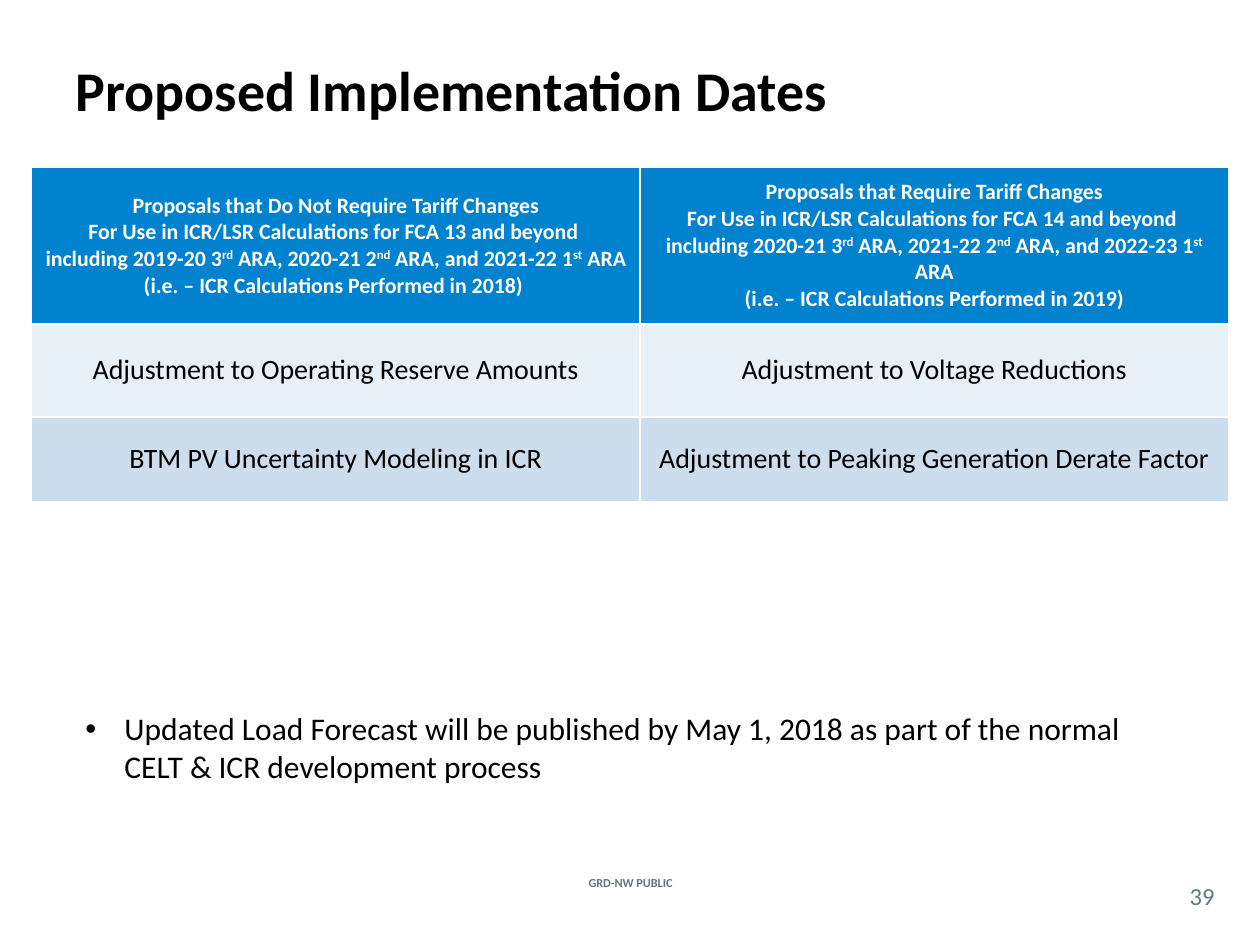
from lxml import etree
from pptx import Presentation
from pptx.dml.color import RGBColor
from pptx.enum.text import MSO_ANCHOR, PP_ALIGN
from pptx.oxml import parse_xml
from pptx.oxml.ns import nsdecls, qn
from pptx.util import Inches, Pt

LEFT, CENTER = PP_ALIGN.LEFT, PP_ALIGN.CENTER
TOP, MIDDLE = MSO_ANCHOR.TOP, MSO_ANCHOR.MIDDLE
BLACK = RGBColor(0x00, 0x00, 0x00)
WHITE = RGBColor(0xFF, 0xFF, 0xFF)
GRAY = RGBColor(0x62, 0x77, 0x7F)
BLUE = RGBColor(0x00, 0x82, 0xCF)
PALE_BLUE = RGBColor(0xE7, 0xEF, 0xF7)
LIGHT_BLUE = RGBColor(0xCC, 0xDD, 0xEE)


def add_runs(paragraph, text, size, color, bold=False, align=LEFT):
    """Fill a paragraph; text between carets is set as superscript."""
    paragraph.alignment = align
    for index, part in enumerate(text.split("^")):
        run = paragraph.add_run()
        run.text = part
        run.font.name = "Calibri"
        run.font.size = Pt(size)
        run.font.bold = bold
        run.font.color.rgb = color
        if index % 2:
            run.font._element.set("baseline", "30000")


def add_text(box, text, size, color, bold=False, align=LEFT, anchor=MIDDLE, inset=None):
    shape = slide.shapes.add_textbox(*(Inches(length) for length in box))
    frame = shape.text_frame
    frame.word_wrap = True
    frame.vertical_anchor = anchor
    if inset is not None:
        frame.margin_left = frame.margin_right = Inches(inset)
        frame.margin_top = frame.margin_bottom = Inches(inset)
    add_runs(frame.paragraphs[0], text, size, color, bold, align)
    return frame.paragraphs[0]


presentation = Presentation()
presentation.slide_width = Inches(10)
presentation.slide_height = Inches(7.5)
slide = presentation.slides.add_slide(presentation.slide_layouts[6])

add_text((4.27, 6.92, 1.47, 0.17), "GRD-NW PUBLIC", 7, GRAY, bold=True, align=CENTER)
add_text((9.33, 6.96, 0.42, 0.29), "39", 14, GRAY, align=CENTER, inset=0)
add_text((0.5, 0.08, 9, 1.25), "Proposed Implementation Dates", 32, BLACK, bold=True)

# Table of proposals: text, size, colour and fill follow the row
rows = [
    (1.24, BLUE, WHITE, 12.5, [
        ["Proposals that Do Not Require Tariff Changes",
         "For Use in ICR/LSR Calculations for FCA 13 and beyond ",
         "including 2019-20 3^rd^ ARA, 2020-21 2^nd^ ARA, and 2021-22 1^st^ ARA",
         "(i.e. – ICR Calculations Performed in 2018) "],
        ["Proposals that Require Tariff Changes",
         "For Use in ICR/LSR Calculations for FCA 14 and beyond ",
         "including 2020-21 3^rd^ ARA, 2021-22 2^nd^ ARA, and 2022-23 1^st^ ARA",
         "(i.e. – ICR Calculations Performed in 2019)"],
    ]),
    (0.74, PALE_BLUE, BLACK, 16, [
        ["Adjustment to Operating Reserve Amounts"],
        ["Adjustment to Voltage Reductions"],
    ]),
    (0.67, LIGHT_BLUE, BLACK, 16, [
        ["BTM PV Uncertainty Modeling in ICR"],
        ["Adjustment to Peaking Generation Derate Factor"],
    ]),
]
table = slide.shapes.add_table(
    len(rows), 2, Inches(0.25), Inches(1.33), Inches(9.5), Inches(2.65)).table
for column, width in zip(table.columns, (4.83, 4.67)):
    column.width = Inches(width)

for row_index, (height, fill, color, size, texts) in enumerate(rows):
    table.rows[row_index].height = Inches(height)
    for column_index, lines in enumerate(texts):
        cell = table.cell(row_index, column_index)
        cell.vertical_anchor = MIDDLE
        cell.margin_left = cell.margin_right = Inches(0.09)
        cell.margin_top = cell.margin_bottom = Inches(0.05)
        for side in ("lnL", "lnR", "lnT", "lnB"):
            cell._tc.get_or_add_tcPr().append(parse_xml(
                f'<a:{side} {nsdecls("a")} w="12700"><a:solidFill>'
                f'<a:srgbClr val="{WHITE}"/></a:solidFill></a:{side}>'))
        cell.fill.solid()
        cell.fill.fore_color.rgb = fill
        frame = cell.text_frame
        for index, line in enumerate(lines):
            paragraph = frame.add_paragraph() if index else frame.paragraphs[0]
            add_runs(paragraph, line, size, color, row_index == 0, CENTER)

# Bulleted note under the table
note = add_text(
    (0.58, 5.58, 8.5, 0.71),
    "Updated Load Forecast will be published by May 1, 2018 as part of the normal "
    "CELT & ICR development process",
    18, BLACK, anchor=TOP)
properties = note._p.get_or_add_pPr()
properties.set("marL", str(Inches(0.31)))
properties.set("indent", str(-Inches(0.31)))
etree.SubElement(properties, qn("a:buFont")).set("typeface", "Arial")
etree.SubElement(properties, qn("a:buChar")).set("char", "•")

presentation.save("out.pptx")
